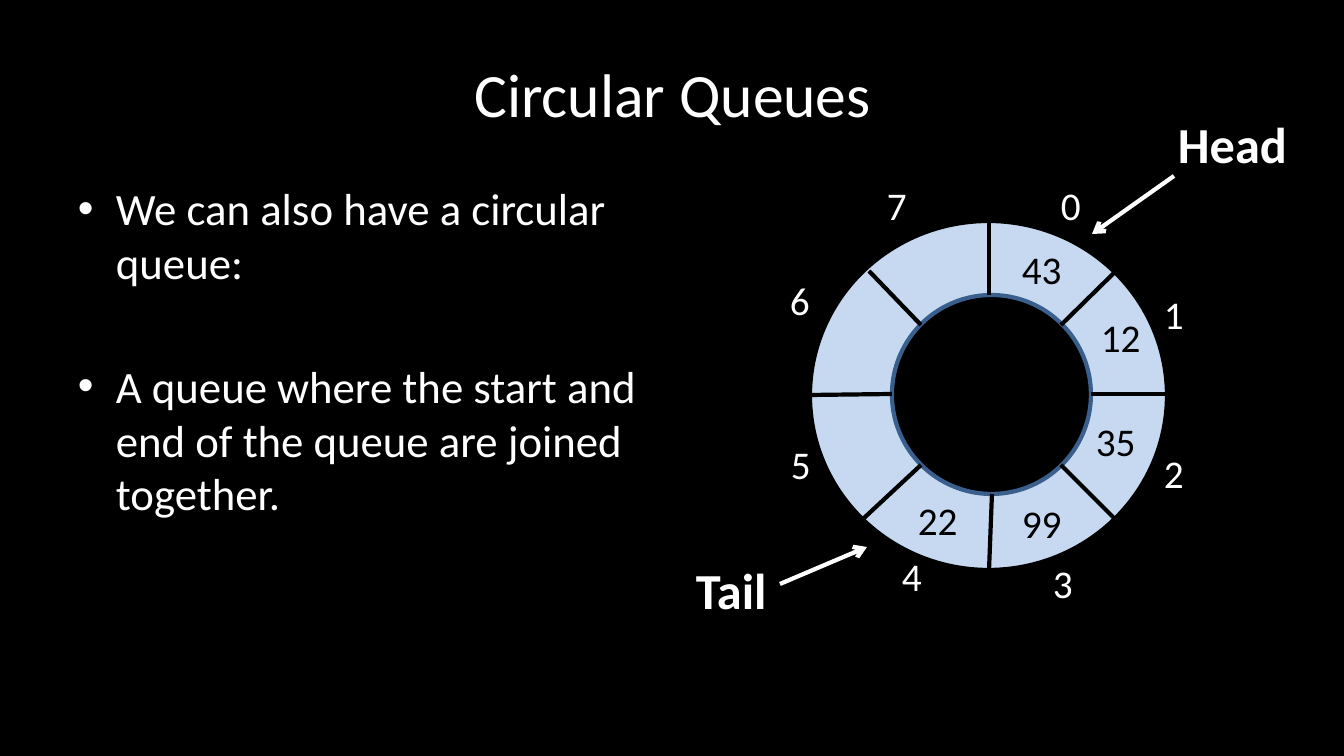
from dataclasses import dataclass

from lxml import etree
from pptx import Presentation
from pptx import util as u
from pptx.dml.color import RGBColor
from pptx.enum import shapes, text
from pptx.oxml.ns import qn

EMU_PER_PX = 12192000 / 1344


@dataclass(frozen=True)
class Theme:
    font: str = "Calibri"
    black: RGBColor = RGBColor(0x00, 0x00, 0x00)
    white: RGBColor = RGBColor(0xFF, 0xFF, 0xFF)
    ring: RGBColor = RGBColor(0xC6, 0xD9, 0xF1)
    hub_edge: RGBColor = RGBColor(0x3A, 0x5F, 0x8C)
    title: int = 44
    body: int = 32
    pointer: int = 36
    number: int = 28
    line: int = 3
    body_gap: int = 50


THEME = Theme()

BULLETS = (
    "We can also have a circular queue:",
    "A queue where the start and end of the queue are joined together.",
)
# Inner end and outer end of each line between two cells
DIVIDERS = (
    (921, 325, 869, 271),
    (989, 295, 989, 221),
    (1061, 325, 1115, 272),
    (1091, 394, 1167, 394),
    (1061, 465, 1115, 519),
    (992, 494, 989, 571),
    (921, 465, 863, 519),
    (892, 394, 810, 395),
)
INDEX_PLACES = (
    (1051, 176), (1154, 285), (1154, 444), (1043, 554),
    (892, 547), (781, 435), (780, 271), (877, 176),
)
VALUES = (
    ("43", 1012, 240),
    ("12", 1091, 308),
    ("35", 1086, 412),
    ("99", 1012, 494),
    ("22", 908, 491),
)
POINTERS = (
    ("Head", (1168, 108, 131, 72), (1174, 176, 1092, 234)),
    ("Tail", (686, 554, 92, 72), (780, 584, 867, 547)),
)


def px(*lengths):
    return [u.Emu(round(n * EMU_PER_PX)) for n in lengths]


def add_run(p, words, size, color, bold=False):
    r = p.add_run()
    r.text = words
    r.font.name = THEME.font
    r.font.size = u.Pt(size)
    r.font.bold = bold
    r.font.color.rgb = color


def add_title(slide, words):
    tf = slide.shapes.add_textbox(*px(68, 30, 1210, 126)).text_frame
    tf.word_wrap = True
    tf.vertical_anchor = text.MSO_ANCHOR.MIDDLE
    p = tf.paragraphs[0]
    p.alignment = text.PP_ALIGN.CENTER
    add_run(p, words, THEME.title, THEME.white)


def add_bullets(slide, items):
    tf = slide.shapes.add_textbox(*px(68, 176, 605, 499)).text_frame
    tf.word_wrap = True
    indent = px(38)[0]
    for i, words in enumerate(items):
        p = tf.add_paragraph() if i else tf.paragraphs[0]
        pPr = p._p.get_or_add_pPr()
        pPr.set("marL", str(indent))
        pPr.set("indent", str(-indent))
        etree.SubElement(pPr, qn("a:buFont"), typeface="Arial")
        etree.SubElement(pPr, qn("a:buChar"), char="•")
        if i:
            p.space_before = u.Pt(THEME.body_gap)
        add_run(p, words, THEME.body, THEME.white)


def add_label(slide, words, box, size, color, bold=False):
    tf = slide.shapes.add_textbox(*px(*box)).text_frame
    tf.word_wrap = False
    tf.auto_size = text.MSO_AUTO_SIZE.SHAPE_TO_FIT_TEXT
    add_run(tf.paragraphs[0], words, size, color, bold)


def add_disc(slide, box, fill, edge):
    sp = slide.shapes.add_shape(shapes.MSO_SHAPE.OVAL, *px(*box))
    sp.shadow.inherit = False
    sp.fill.solid()
    sp.fill.fore_color.rgb = fill
    sp.line.color.rgb = edge
    sp.line.width = u.Pt(THEME.line)


def add_line(slide, ends, color, arrow=False):
    line = slide.shapes.add_connector(shapes.MSO_CONNECTOR.STRAIGHT, *px(*ends))
    line.line.color.rgb = color
    line.line.width = u.Pt(THEME.line)
    if arrow:
        etree.SubElement(line.line._get_or_add_ln(), qn("a:tailEnd"), type="arrow")
    etree.SubElement(line._element.spPr, qn("a:effectLst"))


def add_ring(slide):
    add_disc(slide, (810, 221, 357, 349), THEME.ring, THEME.black)
    add_disc(slide, (892, 295, 199, 199), THEME.black, THEME.hub_edge)
    for ends in DIVIDERS:
        add_line(slide, ends, THEME.black)
    for index, (x, y) in enumerate(INDEX_PLACES):
        add_label(slide, str(index), (x, y, 40, 57), THEME.number, THEME.white)
    for value, x, y in VALUES:
        add_label(slide, value, (x, y, 60, 57), THEME.number, THEME.black)


def main():
    prs = Presentation()
    prs.slide_width, prs.slide_height = px(1344, 756)
    slide = prs.slides.add_slide(prs.slide_layouts[6])
    slide.background.fill.solid()
    slide.background.fill.fore_color.rgb = THEME.black

    add_title(slide, "Circular Queues")
    add_bullets(slide, BULLETS)
    add_ring(slide)
    for name, box, ends in POINTERS:
        add_label(slide, name, box, THEME.pointer, THEME.white, bold=True)
        add_line(slide, ends, THEME.white, arrow=True)

    prs.save("out.pptx")


if __name__ == "__main__":
    main()
